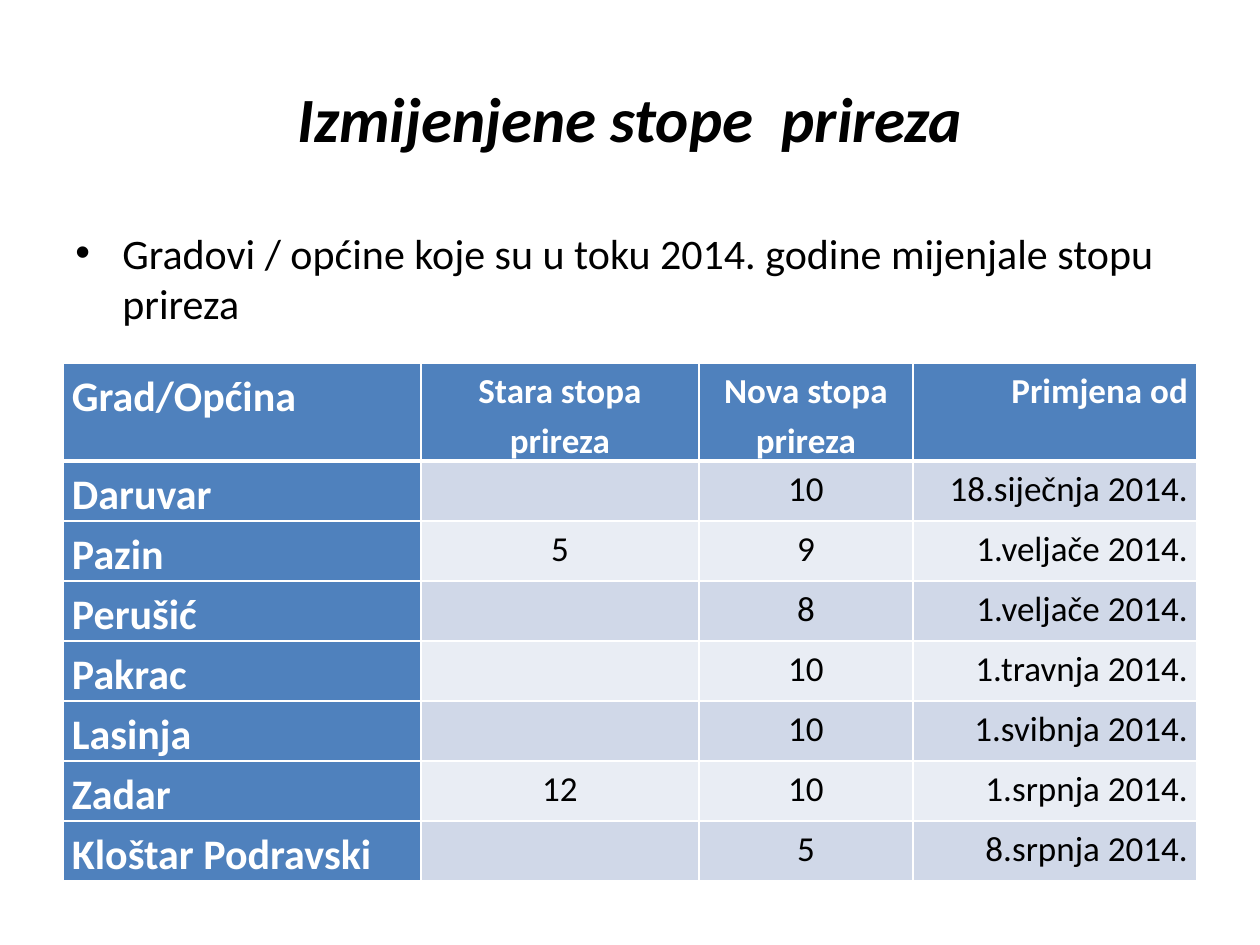
from lxml import etree
from pptx import Presentation
from pptx.dml.color import RGBColor
from pptx.enum import text
from pptx.oxml import ns
from pptx.util import Pt

PX = 914400 / 126
COLORS = {"white": "FFFFFF", "black": "000000", "blue": "4F81BD",
          "band_dark": "D0D8E8", "band_light": "E9EDF4"}
ALIGN = text.PP_ALIGN


def px(n):
    return round(n * PX)


def style(p, size, color, bold=False, italic=False):
    for r in p.runs:
        r.font.name = "Calibri"
        r.font.size = Pt(size)
        r.font.bold = bold
        r.font.italic = italic
        r.font.color.rgb = RGBColor.from_string(COLORS[color])


prs = Presentation()
prs.slide_width, prs.slide_height = px(1260), px(945)
s = prs.slides.add_slide(prs.slide_layouts[6])

title = s.shapes.add_textbox(px(63), px(38), px(1134), px(158))
tf = title.text_frame
tf.word_wrap = True
tf.vertical_anchor = text.MSO_ANCHOR.MIDDLE
tf.text = "Izmijenjene stope  prireza"
p = tf.paragraphs[0]
p.alignment = ALIGN.CENTER
style(p, 36, "black", bold=True, italic=True)

rows = [
    ("Grad/Općina", "Stara stopa prireza", "Nova stopa prireza", "Primjena od"),
    ("Daruvar", "", "10", "18.siječnja 2014."),
    ("Pazin", "5", "9", "1.veljače 2014."),
    ("Perušić", "", "8", "1.veljače 2014."),
    ("Pakrac", "", "10", "1.travnja 2014."),
    ("Lasinja", "", "10", "1.svibnja 2014."),
    ("Zadar", "12", "10", "1.srpnja 2014."),
    ("Kloštar Podravski", "", "5", "8.srpnja 2014."),
]
widths = [358, 278, 214, 284]
heights = [98] + [60] * (len(rows) - 1)
aligns = [ALIGN.LEFT, ALIGN.CENTER, ALIGN.CENTER, ALIGN.RIGHT]

frame = s.shapes.add_table(len(rows), len(widths), px(63), px(363),
                           px(sum(widths)), px(sum(heights)))
table = frame.table
for col, width in zip(table.columns, widths):
    col.width = px(width)
for row, height in zip(table.rows, heights):
    row.height = px(height)

for i, values in enumerate(rows):
    for j, value in enumerate(values):
        cell = table.cell(i, j)
        cell.margin_left = cell.margin_right = px(9)
        cell.margin_top, cell.margin_bottom = px(1), 0
        tcPr = cell._tc.get_or_add_tcPr()
        for side in "LRTB":
            heavy = (i, side) in ((0, "B"), (1, "T"))
            ln = etree.SubElement(tcPr, ns.qn(f"a:ln{side}"), w=str(Pt(3 if heavy else 1)))
            fill = etree.SubElement(ln, ns.qn("a:solidFill"))
            etree.SubElement(fill, ns.qn("a:srgbClr"), val=COLORS["white"])
        heading = i == 0 or j == 0
        band = "blue" if heading else "band_dark" if i % 2 else "band_light"
        cell.fill.solid()
        cell.fill.fore_color.rgb = RGBColor.from_string(COLORS[band])
        cell.text_frame.text = value
        p = cell.text_frame.paragraphs[0]
        p.alignment = aligns[j]
        p.line_spacing = 1.15
        style(p, 20 if j else 24, "white" if heading else "black", bold=heading)

body = s.shapes.add_textbox(px(63), px(221), px(1134), px(152))
tf = body.text_frame
tf.word_wrap = True
tf.text = "Gradovi / općine koje su u toku 2014. godine mijenjale stopu prireza"
p = tf.paragraphs[0]
pPr = p._p.get_or_add_pPr()
pPr.set("marL", str(px(47)))
pPr.set("indent", str(px(-47)))
etree.SubElement(pPr, ns.qn("a:buFont"), typeface="Arial")
etree.SubElement(pPr, ns.qn("a:buChar"), char="•")
style(p, 24, "black")

prs.save("out.pptx")
